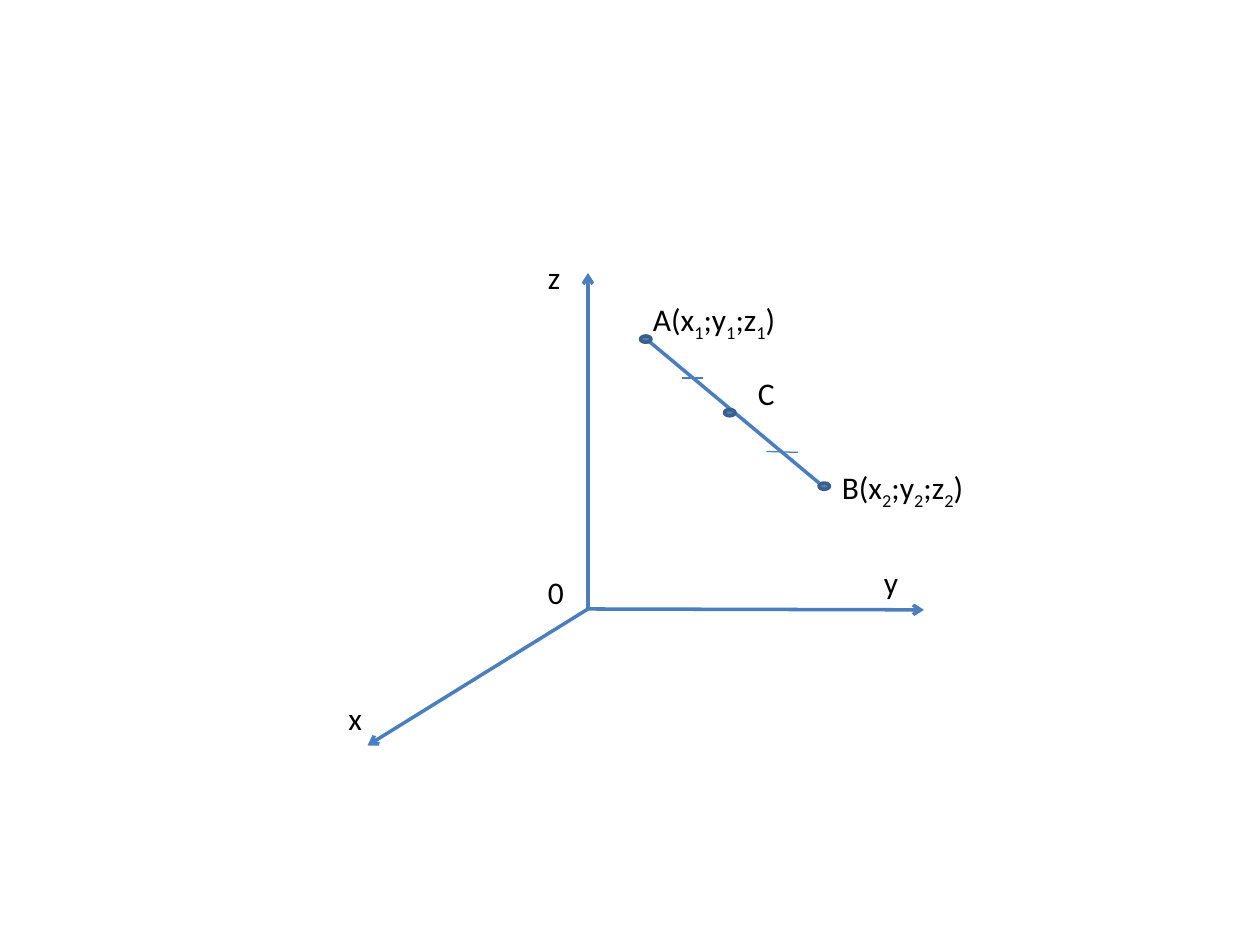
from pptx import Presentation
from pptx.dml.color import RGBColor
from pptx.enum.shapes import MSO_CONNECTOR, MSO_SHAPE
from pptx.enum.text import MSO_AUTO_SIZE
from pptx.oxml.ns import qn
from pptx.util import Pt
from lxml import etree

STRAIGHT = MSO_CONNECTOR.STRAIGHT
ELLIPSE = MSO_SHAPE.OVAL
GROW = MSO_AUTO_SIZE.SHAPE_TO_FIT_TEXT

LINE_COLOR = "4B7EBC"
DOT_FILL = "4F81BD"
DOT_OUTLINE = "3A5F8C"
TEXT_COLOR = "000000"

LABEL_FONT = {"name": "Calibri", "size": Pt(18)}
LABEL_FRAME = {"word_wrap": True, "auto_size": GROW}


def color(hex_value):
    """Turn a hex string into a colour."""
    return RGBColor.from_string(hex_value)


def apply_format(target, values):
    """Set each format value on the target."""
    for name, value in values.items():
        setattr(target, name, value)


def add_line(slide, box, start, end, width, arrow=False):
    """Draw a straight line between two points of the box."""
    left, top = box
    line = slide.shapes.add_connector(
        STRAIGHT,
        Pt(left + start[0]), Pt(top + start[1]),
        Pt(left + end[0]), Pt(top + end[1]),
    )
    line.line.color.rgb = color(LINE_COLOR)
    line.line.width = Pt(width)
    if arrow:
        outline = line.line._get_or_add_ln()
        etree.SubElement(outline, qn("a:tailEnd"), type="arrow")
    etree.SubElement(line._element.spPr, qn("a:effectLst"))


def add_dot(slide, box, position):
    """Draw a point marker with its corner at a position in the box."""
    left, top = box
    dot = slide.shapes.add_shape(
        ELLIPSE, Pt(left + position[0]), Pt(top + position[1]), Pt(6), Pt(3.6)
    )
    dot.shadow.inherit = False
    dot.fill.solid()
    dot.fill.fore_color.rgb = color(DOT_FILL)
    dot.line.color.rgb = color(DOT_OUTLINE)
    dot.line.width = Pt(2)


def add_label(slide, box, position, width, parts):
    """Write a label whose every second part is a subscript."""
    left, top = box
    label = slide.shapes.add_textbox(
        Pt(left + position[0]), Pt(top + position[1]), Pt(width), Pt(30)
    )
    apply_format(label.text_frame, LABEL_FRAME)
    paragraph = label.text_frame.paragraphs[0]
    for index, part in enumerate(parts):
        run = paragraph.add_run()
        run.text = part
        apply_format(run.font, LABEL_FONT)
        run.font.color.rgb = color(TEXT_COLOR)
        if index % 2:
            run._r.get_or_add_rPr().set("baseline", "-25000")


def add_axes(slide, box):
    """Draw the three coordinate axes with their labels."""
    origin = (144, 204)
    for tip in [(144, 12), (336, 204.5), (18, 282)]:
        add_line(slide, box, origin, tip, 2, arrow=True)
    labels = {"0": (114, 180), "x": (0, 252), "y": (306, 174), "z": (114, 0)}
    for name, position in labels.items():
        add_label(slide, box, position, 30, [name])


def add_segment(slide, box):
    """Draw segment AB with its midpoint C, equality ticks and labels."""
    add_line(slide, box, (1.2, 24), (102, 108), 2)
    for position in [(0, 24), (102, 108), (48, 66)]:
        add_dot(slide, box, position)
    for start, end in [((24, 48), (36, 48)), ((72, 90), (90, 90.5))]:
        add_line(slide, box, start, end, 0.75)
    for name, index, position, width in [
        ("А", "1", (0, 0), 108),
        ("В", "2", (108, 96), 102),
    ]:
        parts = [f"{name}(x", index, ";y", index, ";z", index, ")"]
        add_label(slide, box, position, width, parts)
    add_label(slide, box, (60, 42), 36, ["C"])


def main():
    """Build the slide and save it."""
    presentation = Presentation()
    apply_format(presentation, {"slide_width": Pt(720), "slide_height": Pt(540)})
    slide = presentation.slides.add_slide(presentation.slide_layouts[6])
    add_axes(slide, (192, 144))
    add_segment(slide, (366, 168))
    presentation.save("out.pptx")


if __name__ == "__main__":
    main()
